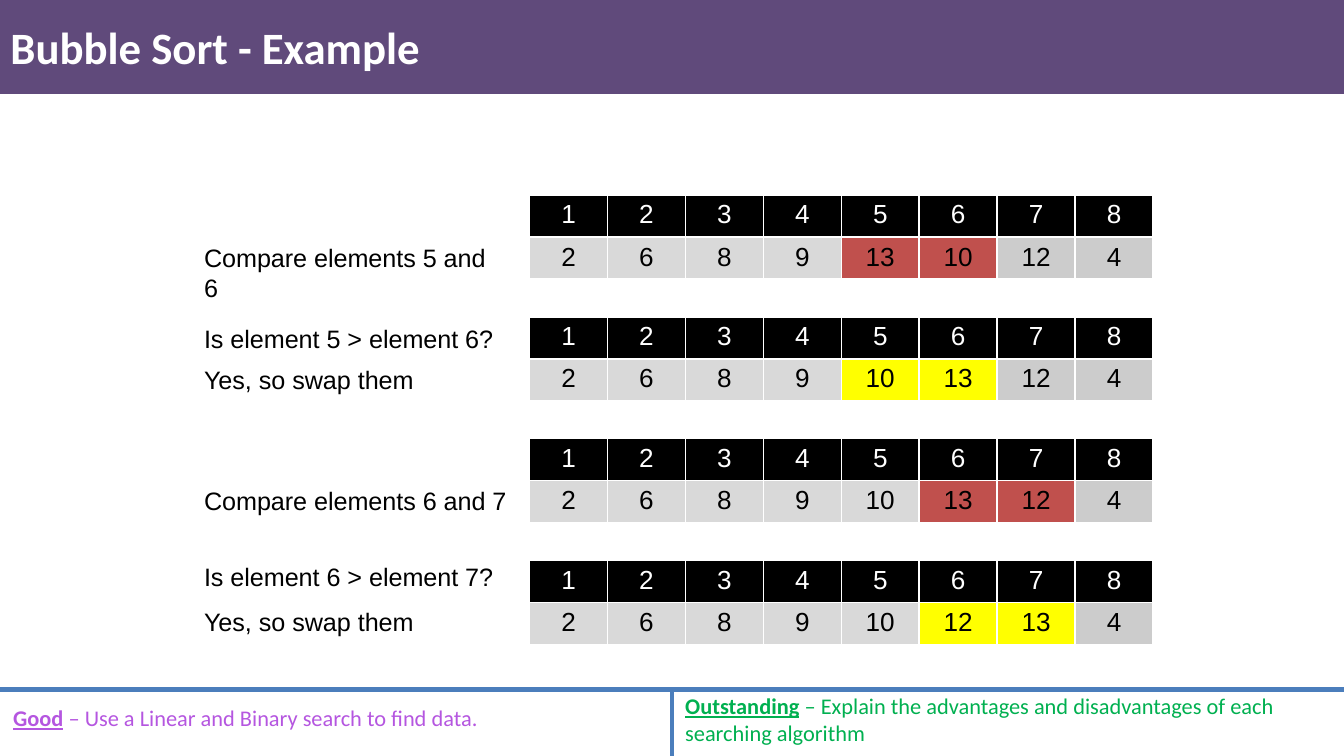
from lxml.etree import SubElement as Sub
from pptx import Presentation
from pptx.dml.color import RGBColor as RGB
from pptx.enum.shapes import MSO_CONNECTOR as Conn, MSO_SHAPE as Kind
from pptx.enum.text import MSO_ANCHOR as Anchor, PP_ALIGN as Align
from pptx.oxml.ns import qn
from pptx.util import Inches, Pt

HUES = {"bar": "604A7B", "rule": "4B7EBC", "good": "B556E0", "top": "00B050",
        "black": "000000", "white": "FFFFFF", "done": "D9D9D9", "rest": "CCCCCC",
        "test": "C0504D", "swap": "FFFF00"}
W = 10
H = W * 9 / 16
COL = 0.058 * W
LEFT, TOP, LAST = 3.94, 1.45, 4.17
STEP = (LAST - TOP) / 3
ROW = STEP / 3

deck = Presentation()
deck.slide_width, deck.slide_height = Inches(W), Inches(H)
slide = deck.slides.add_slide(deck.slide_layouts[6])
shapes = slide.shapes


def write(para, text, hue, **form):
    """Add a run, with the font attributes in form."""
    run = para.add_run()
    run.text = text
    run.font.color.rgb = RGB.from_string(HUES[hue])
    for key, val in form.items():
        setattr(run.font, key, val)


def add_box(x, y, w, h, wrap=True, anchor=Anchor.TOP):
    """Add a text box and return its first paragraph."""
    frame = shapes.add_textbox(*map(Inches, (x, y, w, h))).text_frame
    frame.word_wrap = wrap
    frame.vertical_anchor = anchor
    return frame.paragraphs[0]


# Footer with the two goals
base = {"name": "Calibri", "size": Pt(12)}
goals = [
    (0, 5.19, 0.3, "good", "Good", " – Use a Linear and Binary search to find data."),
    (W / 2, 5.1, 0.5, "top", "Outstanding",
     " – Explain the advantages and disadvantages of each searching algorithm"),
]
for x, y, h, hue, head, rest in goals:
    para = add_box(x, y, 0.49 * W, h)
    write(para, head, hue, bold=True, underline=True, **base)
    write(para, rest, hue, **base)

foot = 5.13
for ends in [(0, foot, W, foot), (W / 2, foot, W / 2, H)]:
    rule = shapes.add_connector(Conn.STRAIGHT, *map(Inches, ends))
    rule.line.color.rgb = RGB.from_string(HUES["rule"])
    rule.line.width = Pt(2.25)
    Sub(rule._element.spPr, qn("a:effectLst"))

# Title bar
bar = shapes.add_shape(Kind.RECTANGLE, 0, 0, Inches(W), Inches(0.7))
bar.shadow.inherit = False
bar.fill.solid()
bar.fill.fore_color.rgb = RGB.from_string(HUES["bar"])
bar.line.fill.background()
para = add_box(-0.02, 0.08, W, 0.53, anchor=Anchor.MIDDLE)
write(para, "Bubble Sort - Example", "white", name="Calibri", size=Pt(24), bold=True)

# Each step: values, first cell of the marked pair, mark,
# and labels as (rows below the table's top, width, wrap, text)
steps = [
    ([2, 6, 8, 9, 13, 10, 12, 4], 4, "test",
     [(1, 2.42, True, "Compare elements 5 and 6")]),
    ([2, 6, 8, 9, 10, 13, 12, 4], 4, "swap",
     [(0, 2.44, False, "Is element 5 > element 6?"),
      (1, 1.78, False, "Yes, so swap them")]),
    ([2, 6, 8, 9, 10, 13, 12, 4], 5, "test",
     [(1, 2.48, False, "Compare elements 6 and 7")]),
    ([2, 6, 8, 9, 10, 12, 13, 4], 5, "swap",
     [(-0.13, 2.44, False, "Is element 6 > element 7?"),
      (0.96, 2.19, True, "Yes, so swap them")]),
]
pads = {"margin_left": Inches(0.07), "margin_right": Inches(0.07),
        "margin_top": Inches(0.04), "margin_bottom": Inches(0.04)}

for i, (vals, pair, mark, notes) in enumerate(steps):
    y = TOP + i * STEP
    size = len(vals)
    table = shapes.add_table(2, size, *map(Inches, (LEFT, y, size * COL, 2 * ROW))).table
    table.first_row = table.horz_banding = False
    fills = ["done"] * pair + [mark] * 2 + ["rest"] * (size - pair - 2)
    rows = [(range(1, size + 1), ["black"] * size, "white"), (vals, fills, "black")]
    for r, (nums, hues, ink) in enumerate(rows):
        for c, (num, hue) in enumerate(zip(nums, hues)):
            cell = table.cell(r, c)
            for key, val in pads.items():
                setattr(cell, key, val)
            para = cell.text_frame.paragraphs[0]
            para.alignment = Align.CENTER
            write(para, str(num), ink, name="Arial", size=Pt(14))
            props = cell._tc.get_or_add_tcPr()
            for side in ("lnL", "lnR", "lnT", "lnB"):
                edge = Sub(props, qn(f"a:{side}"), w=str(Pt(1)))
                Sub(Sub(edge, qn("a:solidFill")), qn("a:srgbClr"), val=HUES["white"])
            cell.fill.solid()
            cell.fill.fore_color.rgb = RGB.from_string(HUES[hue])
    for down, w, wrap, text in notes:
        para = add_box(1.42, y + down * ROW, w, 0.33, wrap)
        write(para, text, "black", name="Arial", size=Pt(13.5))

deck.save("out.pptx")
